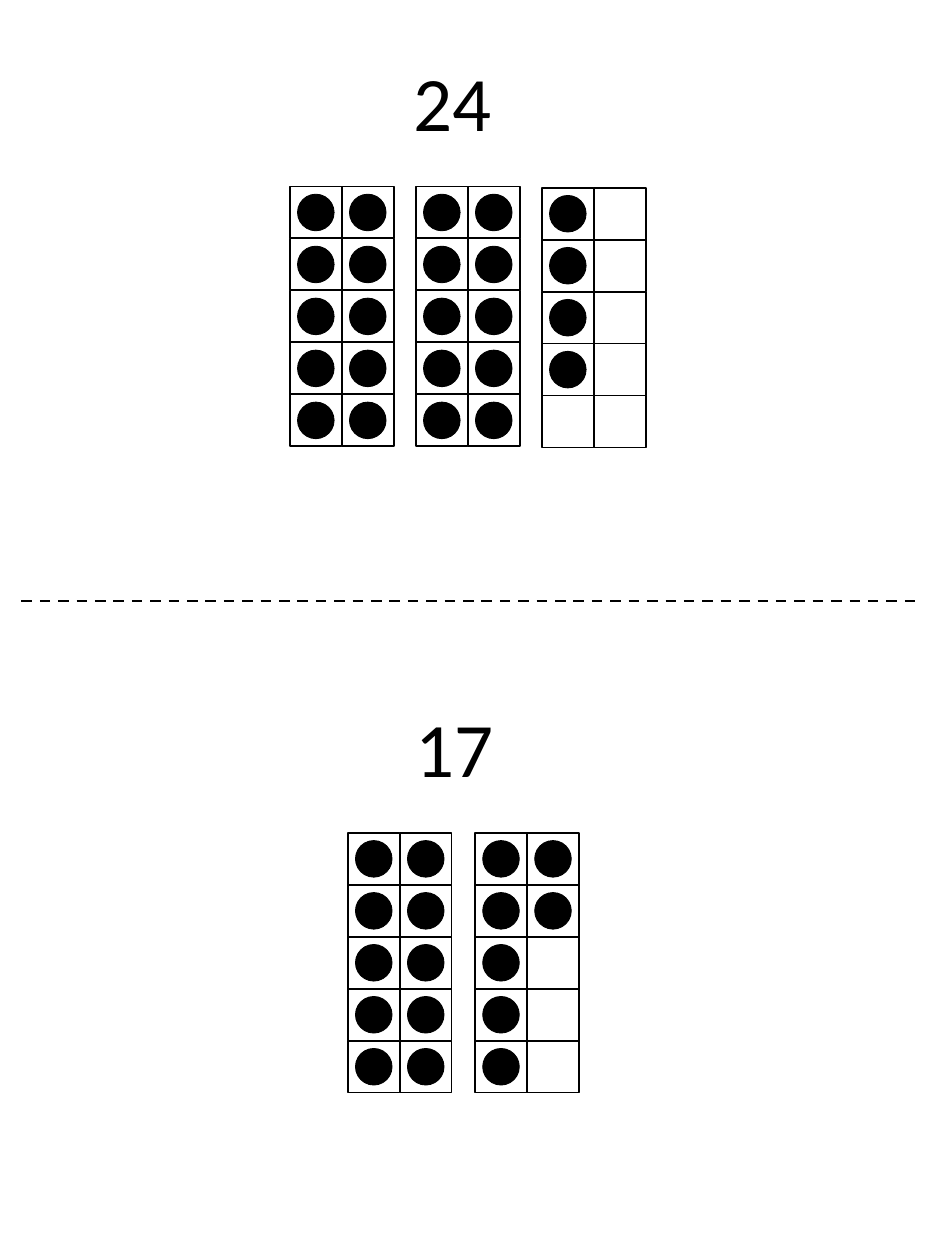
"""Build a sheet of two number cards, each shown with ten frames."""
from dataclasses import dataclass

from lxml import etree
from pptx import Presentation
from pptx.dml.color import RGBColor
from pptx.enum import dml, shapes, text
from pptx.oxml.ns import qn
from pptx.util import Inches, Pt

ROWS, COLUMNS = 5, 2
CELL, DOT = 0.4125, 0.29


@dataclass(frozen=True)
class Theme:
    ink: RGBColor = RGBColor(0, 0, 0)
    paper: RGBColor = RGBColor(255, 255, 255)
    font: str = "Calibri"
    number_size: int = 44
    cell_line: float = 1
    dot_line: float = 0.5
    cut_line: float = 1.5


@dataclass(frozen=True)
class TenFrame:
    left: float
    top: float
    dots: int


@dataclass(frozen=True)
class NumberCard:
    number: str
    left: float
    top: float
    frames: tuple[TenFrame, ...]


THEME = Theme()
CARDS = (
    NumberCard("24", 2.77, 0.3, (
        TenFrame(2.3, 1.48, 10), TenFrame(3.3, 1.48, 10), TenFrame(4.3, 1.49, 4))),
    NumberCard("17", 2.78, 5.43, (
        TenFrame(2.76, 6.61, 10), TenFrame(3.77, 6.61, 7))),
)


def draw_square_shape(slide, kind, left: float, top: float, size: float,
                      fill: RGBColor, line_width: float) -> None:
    shape = slide.shapes.add_shape(
        kind, Inches(left), Inches(top), Inches(size), Inches(size))
    shape.shadow.inherit = False
    shape.fill.solid()
    shape.fill.fore_color.rgb = fill
    shape.line.color.rgb = THEME.ink
    shape.line.width = Pt(line_width)


def draw_frame(slide, frame: TenFrame) -> None:
    inset = (CELL - DOT) / 2
    for row in range(ROWS):
        for column in range(COLUMNS):
            left, top = frame.left + column * CELL, frame.top + row * CELL
            draw_square_shape(slide, shapes.MSO_SHAPE.RECTANGLE, left, top,
                              CELL, THEME.paper, THEME.cell_line)
            if column * ROWS + row < frame.dots:
                draw_square_shape(slide, shapes.MSO_SHAPE.OVAL, left + inset,
                                  top + inset, DOT, THEME.ink, THEME.dot_line)


def write_number(shape, card: NumberCard) -> None:
    shape.left, shape.top = Inches(card.left), Inches(card.top)
    shape.width, shape.height = Inches(1.65), Inches(1)
    frame = shape.text_frame
    frame.word_wrap = True
    frame.auto_size = text.MSO_AUTO_SIZE.NONE
    frame.vertical_anchor = text.MSO_ANCHOR.MIDDLE
    paragraph = frame.paragraphs[0]
    paragraph.alignment = text.PP_ALIGN.CENTER
    run = paragraph.add_run()
    run.text = card.number
    run.font.name = THEME.font
    run.font.size = Pt(THEME.number_size)
    run.font.color.rgb = THEME.ink


def draw_cut_line(slide) -> None:
    connector = slide.shapes.add_connector(
        shapes.MSO_CONNECTOR.STRAIGHT,
        Inches(0.17), Inches(4.77), Inches(7.29), Inches(4.77))
    connector.line.color.rgb = THEME.ink
    connector.line.width = Pt(THEME.cut_line)
    connector.line.dash_style = dml.MSO_LINE.DASH
    etree.SubElement(connector._element.spPr, qn("a:effectLst"))


def main() -> None:
    presentation = Presentation()
    presentation.slide_width, presentation.slide_height = Inches(7.5), Inches(10)
    slide = presentation.slides.add_slide(
        presentation.slide_layouts.get_by_name("Title Only"))
    draw_cut_line(slide)
    for index, card in enumerate(CARDS):
        heading = slide.shapes.title if index == 0 else slide.shapes.add_textbox(0, 0, 0, 0)
        write_number(heading, card)
        for frame in card.frames:
            draw_frame(slide, frame)
    presentation.save("out.pptx")


if __name__ == "__main__":
    main()
